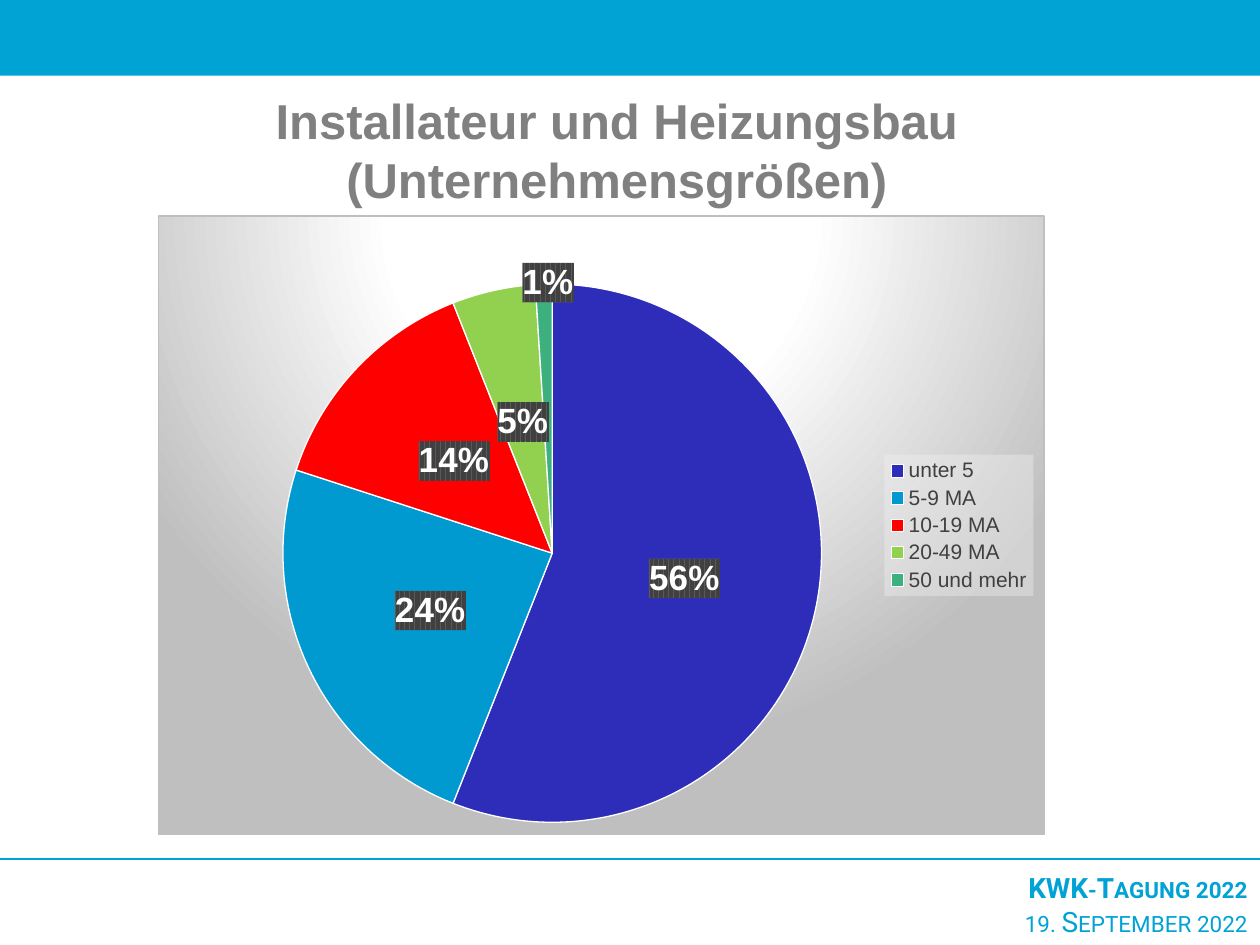
"""Build a slide with a pie chart of company sizes in the heating trade."""
from copy import deepcopy

from lxml.etree import SubElement
from pptx import Presentation
from pptx.chart.data import CategoryChartData
from pptx.dml.color import RGBColor
from pptx.enum.chart import XL_CHART_TYPE, XL_LABEL_POSITION, XL_LEGEND_POSITION
from pptx.enum.shapes import MSO_CONNECTOR, MSO_SHAPE
from pptx.enum.text import PP_ALIGN
from pptx.oxml import parse_xml
from pptx.oxml.ns import nsdecls, qn
from pptx.util import Inches, Pt

CYAN = RGBColor(0x00, 0xA3, 0xD4)
GREY = RGBColor(0x80, 0x80, 0x80)
DARK = RGBColor(0x40, 0x40, 0x40)
BLACK = RGBColor(0, 0, 0)
WHITE = RGBColor(0xFF, 0xFF, 0xFF)

TITLE = "Installateur und Heizungsbau (Unternehmensgrößen)"
FOOTER = [("KWK-Tagung 2022", True), ("19. September 2022", False)]
SIZES = [
    ("unter 5", 56, RGBColor(0x2D, 0x2D, 0xB9)),
    ("5-9 MA", 24, RGBColor(0x00, 0x9A, 0xD0)),
    ("10-19 MA", 14, RGBColor(0xFF, 0x00, 0x00)),
    ("20-49 MA", 5, RGBColor(0x92, 0xD0, 0x50)),
    ("50 und mehr", 1, RGBColor(0x3C, 0xB1, 0x7F)),
]
PIE_AREA = {"layoutTarget": "inner", "xMode": "edge", "yMode": "edge",
            "x": 0.14, "y": 0.11, "w": 0.61, "h": 0.87}
SMALLEST_LABEL_SHIFT = {"x": 0, "y": -0.22}

CHART_BACKGROUND = (
    '<a:gradFill><a:gsLst>'
    '<a:gs pos="0"><a:srgbClr val="FFFFFF"/></a:gs>'
    '<a:gs pos="39000"><a:srgbClr val="FFFFFF"/></a:gs>'
    '<a:gs pos="100000"><a:srgbClr val="BFBFBF"/></a:gs></a:gsLst>'
    '<a:path path="circle"><a:fillToRect l="50000" t="-80000" r="50000" b="180000"/></a:path>'
    '</a:gradFill><a:ln w="9525"><a:solidFill><a:srgbClr val="BFBFBF"/></a:solidFill></a:ln>')
LEGEND_BACKGROUND = (
    '<a:solidFill><a:srgbClr val="F2F2F2"><a:alpha val="39000"/></a:srgbClr></a:solidFill>')
LABEL_BACKGROUND = (
    '<a:pattFill prst="dkVert"><a:fgClr><a:srgbClr val="404040"/></a:fgClr>'
    '<a:bgClr><a:srgbClr val="595959"/></a:bgClr></a:pattFill>')


def style(font, size, color, name="Arial", bold=False):
    font.size, font.name, font.bold = Pt(size), name, bold
    font.color.rgb = color


def properties(content):
    return parse_xml(f'<c:spPr {nsdecls("c", "a")}>{content}</c:spPr>')


def manual_layout(values):
    layout = parse_xml(f'<c:layout {nsdecls("c")}><c:manualLayout/></c:layout>')
    for tag, value in values.items():
        SubElement(layout[0], qn(f"c:{tag}")).set("val", str(value))
    return layout


def add_text(slide, box, lines, align, size, color, name, small_caps=False):
    frame = slide.shapes.add_textbox(*map(Inches, box)).text_frame
    frame.word_wrap = True
    for index, (text, bold) in enumerate(lines):
        paragraph = frame.add_paragraph() if index else frame.paragraphs[0]
        paragraph.text, paragraph.alignment = text, align
        style(paragraph.font, size, color, name, bold)
        if small_caps:
            paragraph._p.pPr.find(qn("a:defRPr")).set("cap", "small")


def add_frame(slide):
    band = slide.shapes.add_shape(MSO_SHAPE.RECTANGLE, 0, 0, Inches(10), Inches(0.6))
    band.shadow.inherit = False
    band.fill.solid()
    band.fill.fore_color.rgb = CYAN
    band.line.fill.background()
    rule = slide.shapes.add_connector(
        MSO_CONNECTOR.STRAIGHT, 0, Inches(6.82), Inches(10), Inches(6.82))
    rule.line.color.rgb, rule.line.width = CYAN, Pt(1)
    SubElement(rule._element.spPr, qn("a:effectLst"))
    add_text(slide, (6.23, 6.86, 3.77, 0.64), FOOTER, PP_ALIGN.RIGHT, 16, CYAN, "Roboto", True)


def add_labels(series):
    labels = series.data_labels
    labels.show_percentage, labels.show_value = True, False
    labels.number_format, labels.number_format_is_linked = "0%", False
    labels.position = XL_LABEL_POSITION.CENTER
    style(labels.font, 20, WHITE, bold=True)
    group = labels._element
    group.find(qn("c:txPr")).addprevious(properties(LABEL_BACKGROUND))
    shared = [deepcopy(part) for part in group if part.tag != qn("c:showLeaderLines")]
    smallest = parse_xml(f'<c:dLbl {nsdecls("c")}><c:idx val="{len(SIZES) - 1}"/></c:dLbl>')
    smallest.extend([manual_layout(SMALLEST_LABEL_SHIFT), *shared])
    group.insert(0, smallest)


def add_pie(slide):
    names, shares, colors = zip(*SIZES)
    data = CategoryChartData()
    data.categories = names
    data.add_series("Series 1", shares)
    chart = slide.shapes.add_chart(
        XL_CHART_TYPE.PIE, *map(Inches, (1.25, 1.71, 7.04, 4.92)), data).chart
    chart.has_title = False
    style(chart.font, 10, BLACK)
    chart.has_legend = True
    legend = chart.legend
    legend.position, legend.include_in_layout = XL_LEGEND_POSITION.RIGHT, False
    style(legend.font, 12, DARK)
    legend._element.find(qn("c:txPr")).addprevious(properties(LEGEND_BACKGROUND))
    chart._chartSpace.chart.addnext(properties(CHART_BACKGROUND))

    plot_area = chart._chartSpace.chart.plotArea
    for layout in plot_area.findall(qn("c:layout")):
        plot_area.remove(layout)
    plot_area.insert(0, manual_layout(PIE_AREA))

    pie = chart.plots[0]
    pie.vary_by_categories = True
    for index, color in enumerate(colors):
        look = pie.series[0].points[index].format
        look.fill.solid()
        look.fill.fore_color.rgb = color
        look.line.color.rgb, look.line.width = WHITE, Pt(0.75)
    add_labels(pie.series[0])


def main():
    deck = Presentation()
    deck.slide_width, deck.slide_height = Inches(10), Inches(7.5)
    slide = deck.slides.add_slide(deck.slide_layouts[6])
    add_frame(slide)
    add_text(slide, (0, 0.67, 9.79, 1.04), [(TITLE, True)], PP_ALIGN.CENTER, 28, GREY, "Arial")
    add_pie(slide)
    deck.save("out.pptx")


if __name__ == "__main__":
    main()
